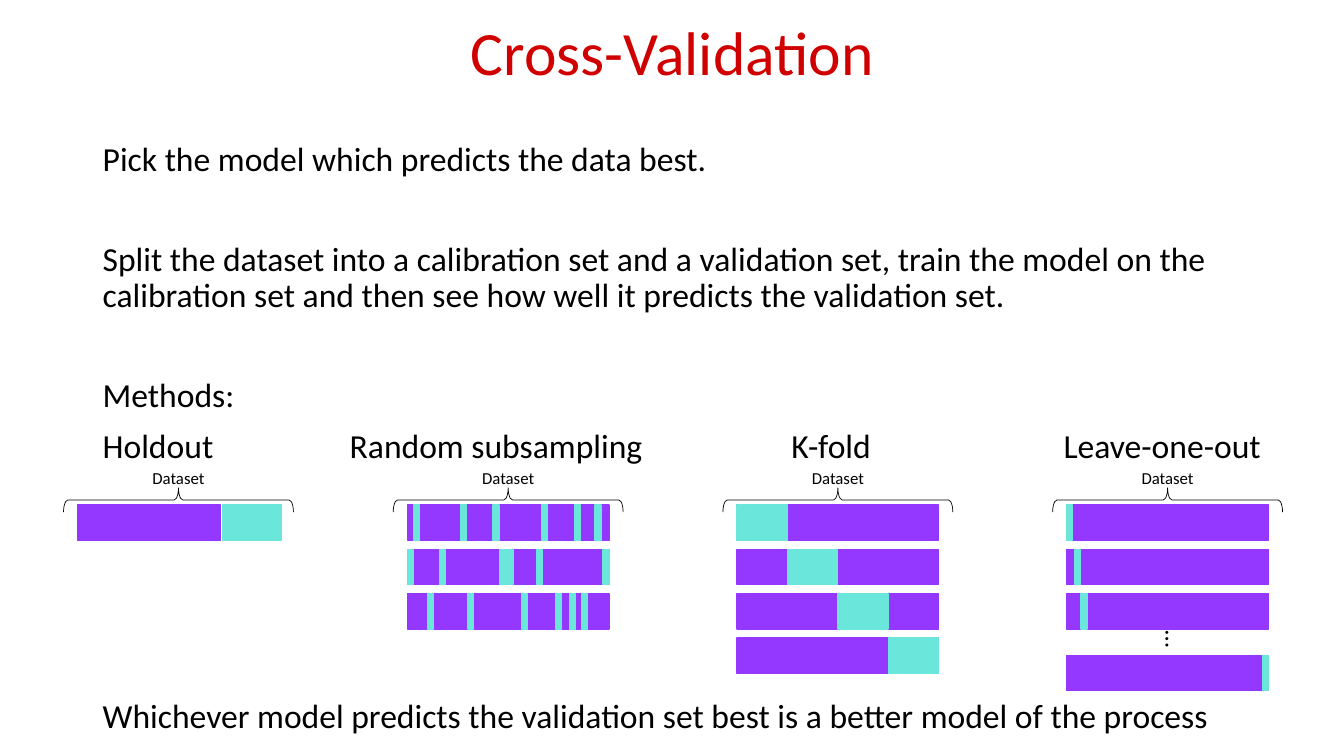
from dataclasses import dataclass

from lxml import etree
from pptx import Presentation
from pptx.dml.color import RGBColor
from pptx.enum import shapes, text
from pptx.util import Inches, Pt


@dataclass(frozen=True)
class Theme:
    font: str = "Calibri"
    title_color: str = "D00000"
    text_color: str = "000000"
    calibration: str = "9437FF"
    validation: str = "6AE6DA"
    title_size: int = 44
    body_size: int = 24
    dots_size: int = 18
    label_size: int = 12


theme = Theme()
presentation = Presentation()
presentation.slide_width = Inches(13.33)
presentation.slide_height = Inches(7.5)
slide = presentation.slides.add_slide(presentation.slide_layouts[6])


def add_text(paragraphs, left, top, width, height, size=theme.body_size,
             color=theme.text_color, align=text.PP_ALIGN.LEFT,
             anchor=text.MSO_ANCHOR.TOP, line_spacing=0.9, space_before=0, rotation=0):
    box = slide.shapes.add_textbox(Inches(left), Inches(top), Inches(width), Inches(height))
    box.rotation = rotation
    frame = box.text_frame
    frame.word_wrap = True
    frame.vertical_anchor = anchor
    for index, words in enumerate(paragraphs):
        paragraph = frame.paragraphs[0] if index == 0 else frame.add_paragraph()
        paragraph.alignment = align
        paragraph.line_spacing = line_spacing
        paragraph.space_before = Pt(space_before if index else 0)
        run = paragraph.add_run()
        run.text = words
        run.font.name = theme.font
        run.font.size = Pt(size)
        run.font.color.rgb = RGBColor.from_string(color)


def add_bar(group, left, top, width, color):
    bar = group.shapes.add_shape(shapes.MSO_SHAPE.RECTANGLE, Inches(left), Inches(top),
                                 Inches(width), Inches(0.35))
    bar.shadow.inherit = False
    bar.fill.solid()
    bar.fill.fore_color.rgb = RGBColor.from_string(color)
    bar.line.color.rgb = RGBColor.from_string(color)
    bar.line.width = Pt(1)


add_text(["Cross-Validation"], 0.38, -0.17, 12.58, 1.45, size=theme.title_size,
         color=theme.title_color, align=text.PP_ALIGN.CENTER, anchor=text.MSO_ANCHOR.MIDDLE)
add_text(["Pick the model which predicts the data best.",
          "Split the dataset into a calibration set and a validation set, train the model "
          "on the calibration set and then see how well it predicts the validation set.",
          "Methods:"],
         0.92, 1.36, 11.8, 2.85, space_before=45.7)
add_text(["Whichever model predicts the validation set best is a better model of the process"],
         0.92, 6.89, 11.8, 0.5)

first_left, column_pitch = 0.77, 3.27
row_tops = [5.01, 5.45, 5.89, 6.33]
last_row_top = 6.5

# Method, name position, calibration width, validation width,
# and for each row its top and the offsets of its validation blocks
methods = [
    ("Holdout", 0.92, 1.42, 0.58, [(row_tops[0], [1.44])]),
    ("Random subsampling", 3.37, 2, 0.06, [
        (row_tops[0], [0.06, 0.53, 0.85, 1.33, 1.66, 1.86]),
        (row_tops[1], [0, 0.32, 0.92, 0.99, 1.28, 1.94]),
        (row_tops[2], [0.2, 0.6, 1.13, 1.47, 1.61, 1.73])]),
    ("K-fold", 7.75, 2, 0.5, [(top, [0.5 * fold]) for fold, top in enumerate(row_tops)]),
    ("Leave-one-out", 10.45, 2, 0.06, [
        (row_tops[0], [0]), (row_tops[1], [0.08]), (row_tops[2], [0.14]),
        (last_row_top, [1.94])]),
]

for column, (name, name_left, bar_width, block_width, rows) in enumerate(methods):
    left = first_left + column * column_pitch
    center = left + 1
    add_text([name], name_left, 4.21, 3.2, 0.45)
    add_text(["Dataset"], center - 0.96, 4.59, 1.92, 0.3, size=theme.label_size,
             align=text.PP_ALIGN.CENTER, line_spacing=1)

    brace = slide.shapes.add_shape(shapes.MSO_SHAPE.LEFT_BRACE, Inches(center - 0.12),
                                   Inches(3.82), Inches(0.24), Inches(2.28))
    brace.rotation = 90
    brace.adjustments[0] = 0.18
    brace.shadow.inherit = False
    brace.fill.background()
    brace.line.color.rgb = RGBColor.from_string(theme.text_color)
    brace.line.width = Pt(0.5)

    bars = slide.shapes.add_group_shape()
    for top, offsets in rows:
        add_bar(bars, left, top, bar_width, theme.calibration)
        for offset in offsets:
            add_bar(bars, left + offset, top, block_width, theme.validation)

leave_one_out_left = first_left + 3 * column_pitch
add_text(["…"], leave_one_out_left + 0.88, 6.17, 0.4, 0.35, size=theme.dots_size,
         align=text.PP_ALIGN.CENTER, anchor=text.MSO_ANCHOR.MIDDLE, line_spacing=1, rotation=90)

presentation.save("out.pptx")
